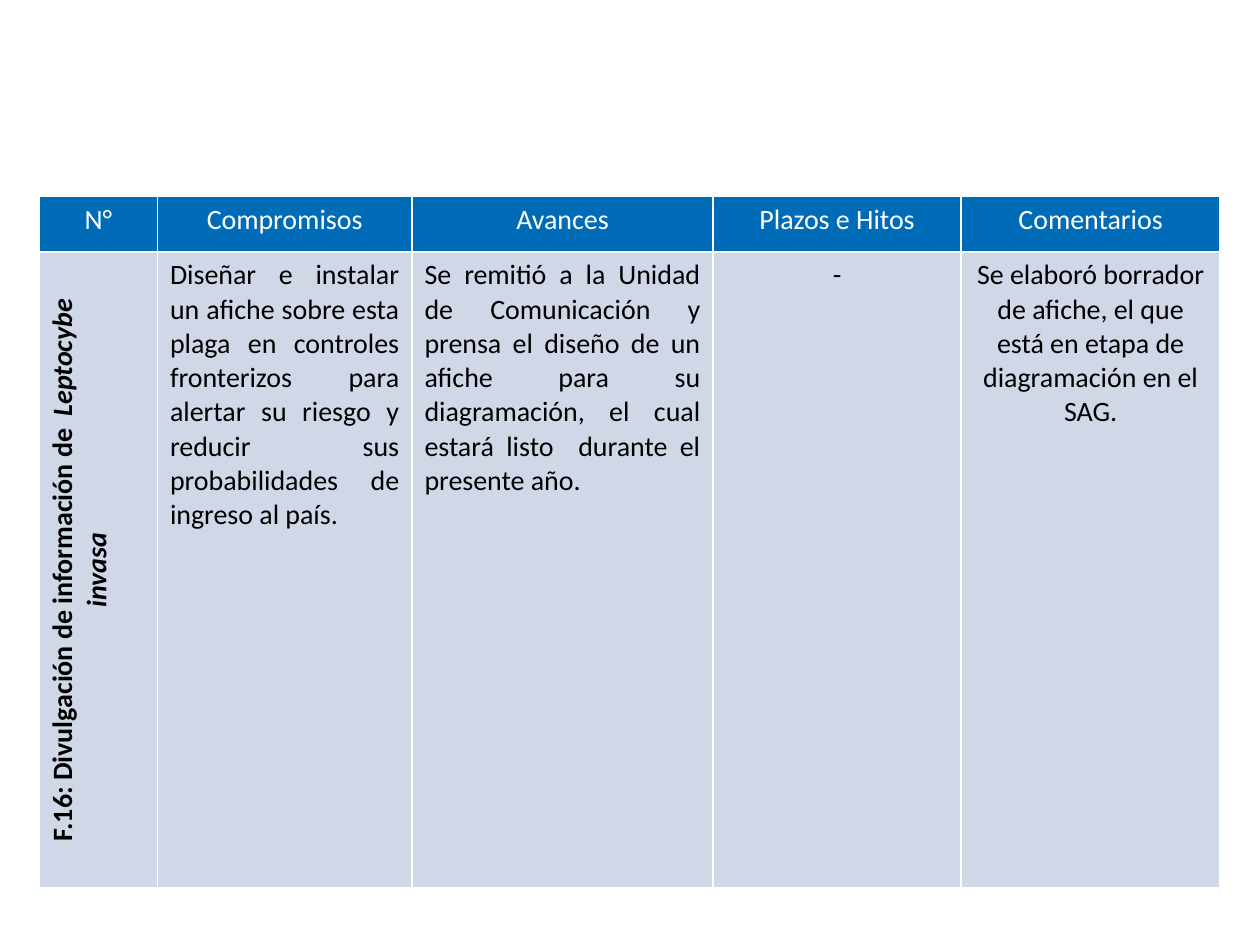
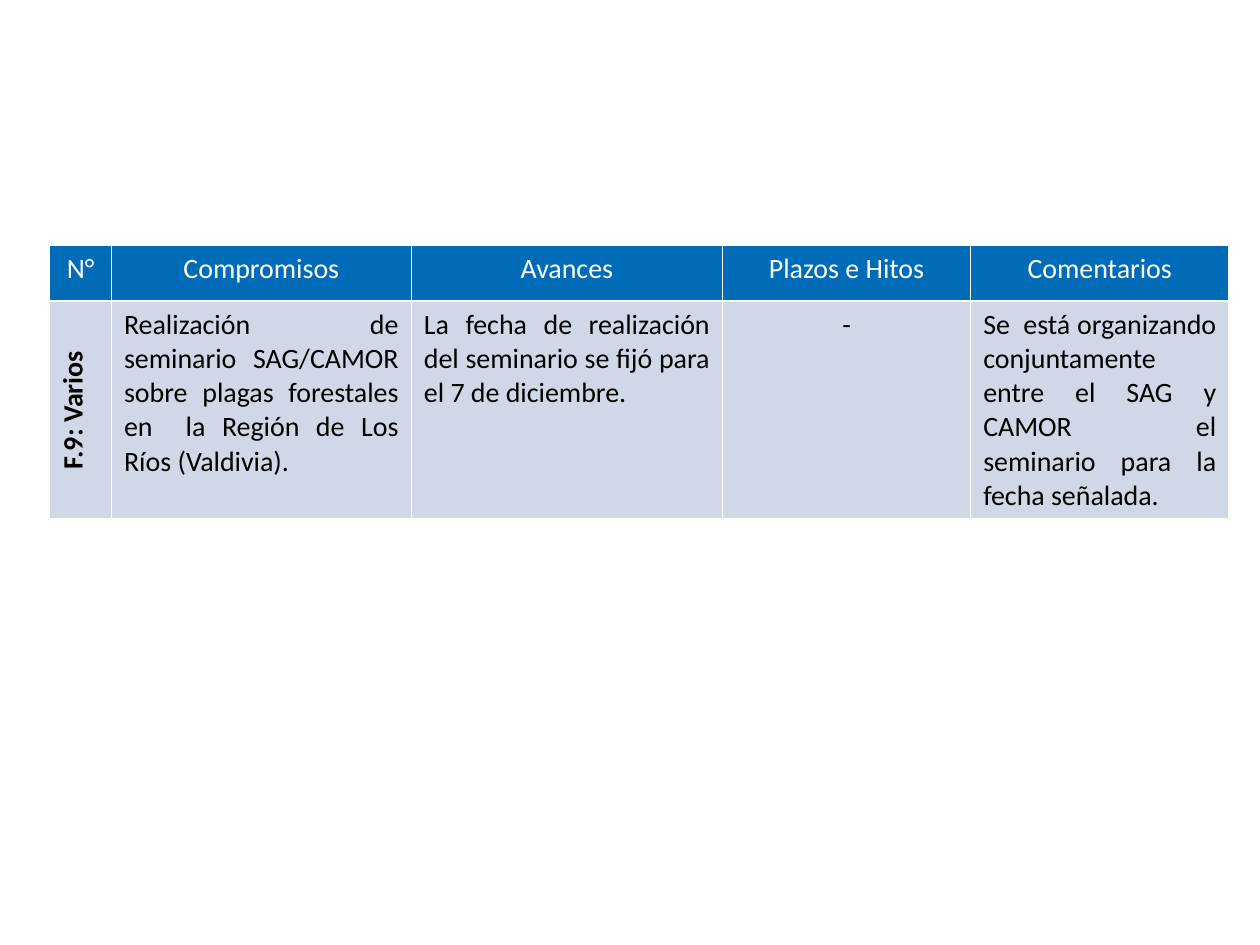
from dataclasses import dataclass

from lxml.etree import SubElement
from pptx import Presentation
from pptx.dml.color import RGBColor
from pptx.enum.text import PP_ALIGN
from pptx.oxml.ns import qn
from pptx.util import Inches, Pt

COLORS = {
    "header": "006CB7",
    "body": "D0D8E8",
    "border": "FFFFFF",
    "header_text": "FFFFFF",
    "body_text": "000000",
}
FONT, SIZE, BORDER = "Calibri", Pt(16), Pt(1)
SLIDE_W, SLIDE_H = Inches(10), Inches(7.5)
HEADERS = ("N°", "Compromisos", "Avances", "Plazos e Hitos", "Comentarios")
HEADER_ROW = 5.87  # percent of the slide height


@dataclass(frozen=True)
class Run:
    text: str
    bold: bool = False
    italic: bool = False


@dataclass(frozen=True)
class Entry:
    runs: tuple[Run, ...]
    align: PP_ALIGN = PP_ALIGN.CENTER
    rotated: bool = False


@dataclass(frozen=True)
class Commitment:
    """One table; left and cols are percent of width, top and row of height."""
    left: float
    top: float
    cols: tuple[float, ...]
    row: float
    entries: tuple[Entry, ...]


def label(*runs: Run) -> Entry:
    return Entry(runs, rotated=True)


def centred(text: str) -> Entry:
    return Entry((Run(text),))


def justified(text: str) -> Entry:
    return Entry((Run(text),), PP_ALIGN.JUSTIFY)


COMMITMENTS = (
    Commitment(3.1, 20.8, (9.4, 20.2, 23.9, 19.7, 20.55), 47.47, (
        label(Run("F.16: Divulgación de información de  ", bold=True),
              Run("Leptocybe invasa", bold=True, italic=True)),
        justified("Diseñar e instalar un afiche sobre esta plaga en controles "
                  "fronterizos para alertar su riesgo y reducir sus "
                  "probabilidades de ingreso al país."),
        justified("Se remitió a la Unidad de Comunicación y prensa el diseño "
                  "de un afiche para su diagramación, el cual estará listo  "
                  "durante el presente año. "),
        centred("-"),
        centred("Se elaboró borrador de afiche, el que está en etapa de "
                "diagramación en el SAG."),
    )),
    Commitment(3.95, 26, (4.9, 23.8, 24.7, 19.7, 20.5), 18.53, (
        label(Run("F.9: Varios", bold=True)),
        justified("Realización de seminario SAG/CAMOR sobre plagas forestales "
                  "en  la Región de Los Ríos (Valdivia)."),
        justified("La fecha de realización del seminario se fijó para el 7 de "
                  "diciembre."),
        centred("-"),
        justified("Se  está organizando conjuntamente entre el SAG y CAMOR el "
                  "seminario para la fecha señalada."),
    )),
)


def across(percent: float) -> int:
    return round(SLIDE_W * percent / 100)


def down(percent: float) -> int:
    return round(SLIDE_H * percent / 100)


def set_borders(cell) -> None:
    tcPr = cell._tc.get_or_add_tcPr()
    for side in "LRTB":
        ln = SubElement(tcPr, qn(f"a:ln{side}"), w=str(BORDER))
        fill = SubElement(ln, qn("a:solidFill"))
        SubElement(fill, qn("a:srgbClr"), val=COLORS["border"])


def fill_cell(cell, entry: Entry, kind: str) -> None:
    set_borders(cell)
    cell.fill.solid()
    cell.fill.fore_color.rgb = RGBColor.from_string(COLORS[kind])
    if entry.rotated:
        cell._tc.get_or_add_tcPr().set("vert", "vert270")
    p = cell.text_frame.paragraphs[0]
    p.alignment = entry.align
    for run in entry.runs:
        r = p.add_run()
        r.text = run.text
        r.font.name, r.font.size = FONT, SIZE
        r.font.bold, r.font.italic = run.bold, run.italic
        r.font.color.rgb = RGBColor.from_string(COLORS[f"{kind}_text"])


def add_commitment(prs, item: Commitment) -> None:
    s = prs.slides.add_slide(prs.slide_layouts[6])
    table = s.shapes.add_table(
        2, len(HEADERS), across(item.left), down(item.top),
        across(sum(item.cols)), down(HEADER_ROW + item.row)).table
    table.horz_banding = False
    for column, width in zip(table.columns, item.cols):
        column.width = across(width)
    for row, height in zip(table.rows, (HEADER_ROW, item.row)):
        row.height = down(height)

    # Header row, then the commitment itself
    for col, (header, entry) in enumerate(zip(HEADERS, item.entries)):
        fill_cell(table.cell(0, col), centred(header), "header")
        fill_cell(table.cell(1, col), entry, "body")


def main() -> None:
    prs = Presentation()
    prs.slide_width, prs.slide_height = SLIDE_W, SLIDE_H
    for item in COMMITMENTS:
        add_commitment(prs, item)
    prs.save("out.pptx")


if __name__ == "__main__":
    main()
